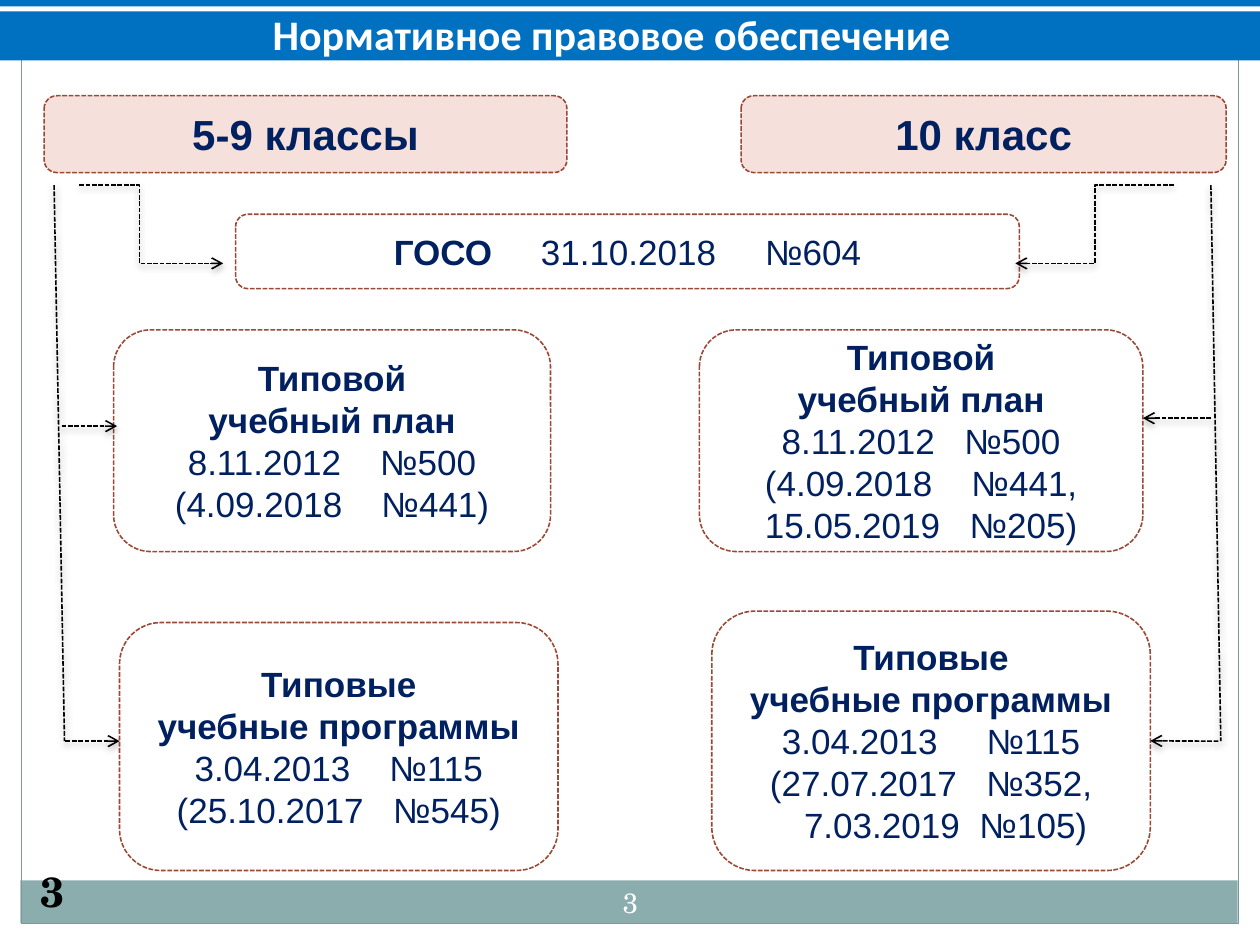
from pptx import Presentation
from pptx.dml.color import RGBColor
from pptx.enum.dml import MSO_LINE as Dash
from pptx.enum.shapes import MSO_CONNECTOR as Link, MSO_SHAPE as Shape
from pptx.enum.text import MSO_ANCHOR as Anchor, PP_ALIGN as Align
from pptx.oxml import parse_xml
from pptx.oxml.ns import nsdecls, qn
from pptx.util import Cm, Pt

BLUE, NAVY, WHITE, BLACK = "0070C0", "002060", "FFFFFF", "000000"
PINK, BROWN, SAGE, GREY = "F6E0DB", "9B4936", "8CADAE", "7C999A"
SERIF = "TeX Gyre Schola"
SPACE = 0.278  # width of an Arial space, in ems

SHADOW = (
    f'<a:effectLst {nsdecls("a")}>'
    '<a:outerShdw blurRad="50800" dist="25400" dir="5400000" rotWithShape="0">'
    '<a:srgbClr val="000000"><a:alpha val="35000"/></a:srgbClr>'
    '</a:outerShdw></a:effectLst>'
)


def rgb(code):
    return RGBColor.from_string(code)


class Deck:
    def __init__(self):
        self.prs = Presentation()
        self.prs.slide_width, self.prs.slide_height = Cm(25.4), Cm(19.05)
        self.slide = self.prs.slides.add_slide(self.prs.slide_layouts[5])
        self.shapes = self.slide.shapes

    def font(self, para, size, color, name="Arial", bold=None):
        font = para.font
        font.size, font.name, font.bold = Pt(size), name, bold
        font.color.rgb = rgb(color)

    def title(self, text, area):
        """Fill the title and bring it in front of the bands."""
        title = self.shapes.title
        title.left, title.top, title.width, title.height = map(Cm, area)
        title.text_frame.text = text
        title.text_frame.vertical_anchor = Anchor.MIDDLE
        para = title.text_frame.paragraphs[0]
        para.alignment = Align.CENTER
        self.font(para, 24, WHITE, "Calibri", True)
        self.shapes._spTree.append(title._element)

    def rect(self, area, fill=None, line=None, kind=Shape.RECTANGLE):
        rect = self.shapes.add_shape(kind, *map(Cm, area))
        rect.shadow.inherit = False
        if fill:
            rect.fill.solid()
            rect.fill.fore_color.rgb = rgb(fill)
        else:
            rect.fill.background()
        if line:
            rect.line.color.rgb = rgb(line)
            rect.line.width = Pt(0.75)
        else:
            rect.line.fill.background()
        return rect

    def box(self, area, lines, fill=WHITE, size=20):
        """Add a dashed box; each line is a list of texts and gaps (in spaces)."""
        box = self.rect(area, fill, BROWN, Shape.ROUNDED_RECTANGLE)
        box.line.width, box.line.dash_style = Pt(0.9), Dash.SQUARE_DOT
        frame = box.text_frame
        frame.word_wrap, frame.vertical_anchor = True, Anchor.MIDDLE
        for i, parts in enumerate(lines):
            para = frame.add_paragraph() if i else frame.paragraphs[0]
            para.alignment = Align.CENTER
            self.font(para, size, NAVY)
            for k, part in enumerate(parts):
                if isinstance(part, str):
                    run = para.add_run()
                    run.text = part
                    run.font.bold = any(c.isalpha() for c in part)
                elif k:
                    self.gap(para, part, size)
                else:
                    para._p.get_or_add_pPr().set("marL", str(Pt(part * SPACE * size)))
        return box

    def gap(self, para, count, size):
        """Add one space, tracked out to the width of several."""
        run = para.add_run()
        run.text = " "
        run.font.bold = False
        run.font._element.set("spc", str(round((count - 1) * SPACE * size * 100)))

    def arrow(self, ends, kind=Link.STRAIGHT, head=True, bend=None, to=None):
        """Add a dashed line; to is a box whose right side it joins."""
        link = self.shapes.add_connector(kind, *map(Cm, ends))
        if to:
            link.end_connect(to, 3)
        link.line.color.rgb = rgb(BLACK)
        link.line.width, link.line.dash_style = Pt(0.9), Dash.SQUARE_DOT
        props = link._element.spPr
        if head:
            props.find(qn("a:ln")).append(
                parse_xml(f'<a:tailEnd {nsdecls("a")} type="arrow"/>'))
        if bend:
            geom = props.find(qn("a:prstGeom"))
            geom.get_or_add_avLst().append(parse_xml(
                f'<a:gd {nsdecls("a")} name="adj1" fmla="val {bend}"/>'))
        props.append(parse_xml(SHADOW))

    def label(self, area, text, size, color, bold=False, align=Align.LEFT):
        label = self.shapes.add_textbox(*map(Cm, area))
        frame = label.text_frame
        frame.word_wrap, frame.vertical_anchor = True, Anchor.MIDDLE
        frame.text = text
        frame.paragraphs[0].alignment = align
        self.font(frame.paragraphs[0], size, color, SERIF, bold)


def main():
    deck = Deck()
    deck.rect((0.41, 17.75, 24.54, 0.86), SAGE)
    deck.rect((0.43, 0.43, 24.54, 18.19), line=GREY)
    deck.rect((0, 0, 25.4, 0.43), WHITE)
    deck.rect((0, 0.23, 25.4, 0.99), BLUE)
    deck.rect((0, 0, 25.4, 0.13), BLUE)
    deck.title("Нормативное правовое обеспечение", (0.05, 0.03, 24.56, 1.3))

    deck.box((0.89, 1.93, 10.54, 1.55), [["5-9 классы"]], PINK, 24)
    deck.box((14.94, 1.93, 9.78, 1.55), [["10 класс"]], PINK, 24)
    deck.box((4.75, 4.32, 15.8, 1.5), [["ГОСО", 5, "31.10.2018", 5, "№604"]])

    plan = [["Типовой"], ["учебный план"]]
    course = [["Типовые"], ["учебные программы"]]
    deck.box((2.29, 6.65, 8.81, 4.47), plan + [
        ["8.11.2012", 4, "№500"],
        ["(4.09.2018", 4, "№441)"]])
    deck.box((14.1, 6.65, 8.94, 4.47), plan + [
        ["8.11.2012", 3, "№500"],
        ["(4.09.2018", 4, "№441,"],
        ["15.05.2019", 3, "№205)"]])
    deck.box((2.41, 12.55, 8.84, 5), course + [
        ["3.04.2013", 4, "№115"],
        ["(25.10.2017", 3, "№545)"]])
    last = deck.box((14.35, 12.32, 8.84, 5.23), course + [
        ["3.04.2013", 5, "№115"],
        ["(27.07.2017", 3, "№352,"],
        [3, "7.03.2019", 2, "№105)"]])

    top, low = 3.73, 14.94
    deck.arrow((1.6, top, 4.5, 5.31), Link.ELBOW, bend=41700)
    deck.arrow((23.67, top, 20.47, 5.31), Link.ELBOW)
    deck.arrow((1.09, top, 1.3, low), head=False)
    deck.arrow((24.41, top, 24.61, low), head=False)
    deck.arrow((1.24, 8.59, 2.36, 8.59))
    deck.arrow((24.41, 8.43, 23.04, 8.43))
    deck.arrow((1.32, low, 2.41, low))
    deck.arrow((24.56, low, 23.19, low), to=last)

    deck.label((11.86, 17.58, 1.7, 1.22), "3", 16, WHITE, align=Align.CENTER)
    deck.label((0.56, 17.3, 1.32, 1.3), "3", 24, BLACK, True)
    deck.prs.save("out.pptx")


if __name__ == "__main__":
    main()
